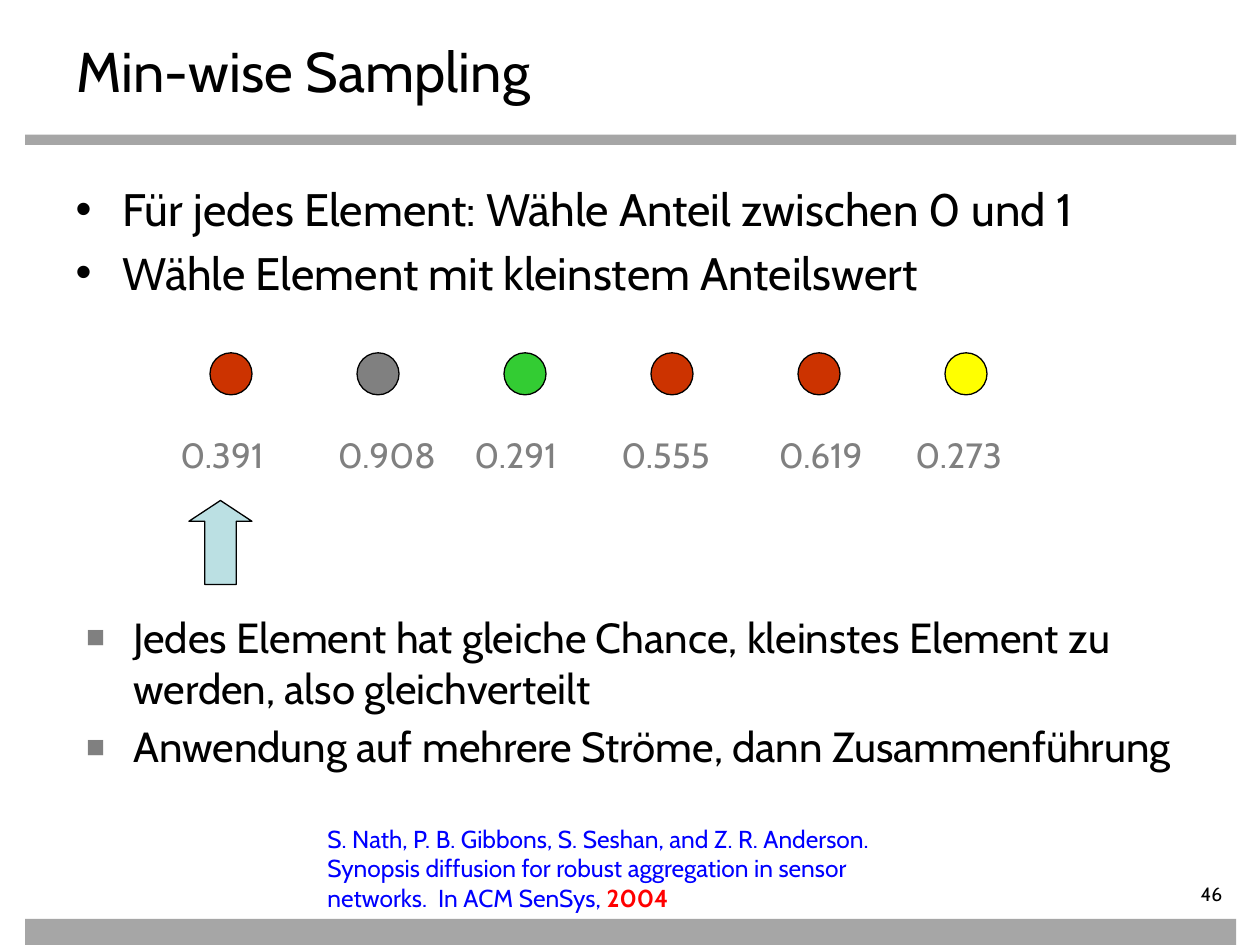
from lxml.etree import SubElement
from pptx import Presentation
from pptx.dml.color import RGBColor
from pptx.enum.shapes import MSO_SHAPE
from pptx.enum.text import MSO_ANCHOR, MSO_AUTO_SIZE, PP_ALIGN
from pptx.oxml.ns import qn
from pptx.util import Pt

FONT = "Cabin"
BLACK = RGBColor(0x00, 0x00, 0x00)
BAR_GRAY = RGBColor(0xA6, 0xA6, 0xA6)
GRAY = RGBColor(0x80, 0x80, 0x80)
RED = RGBColor(0xCC, 0x33, 0x00)
GREEN = RGBColor(0x33, 0xCC, 0x33)
YELLOW = RGBColor(0xFF, 0xFF, 0x00)
PALE_BLUE = RGBColor(0xBB, 0xE0, 0xE3)
CITE_BLUE = RGBColor(0x00, 0x00, 0xFF)
YEAR_RED = RGBColor(0xFF, 0x00, 0x00)

TITLE = "Min-wise Sampling"
STEPS = [
    "Für jedes Element: Wähle Anteil zwischen 0 und 1",
    "Wähle Element mit kleinstem Anteilswert",
]
# colour, value, distance of the label to the left of its circle
SAMPLES = [
    (RED, "0.391", 24),
    (GRAY, "0.908", 18),
    (GREEN, "0.291", 24),
    (RED, "0.555", 24),
    (RED, "0.619", 18),
    (YELLOW, "0.273", 24),
]
CONCLUSIONS = [
    "Jedes Element hat gleiche Chance, kleinstes Element zu werden, also gleichverteilt",
    "Anwendung auf mehrere Ströme, dann Zusammenführung",
]
CITATION = (
    "S. Nath, P. B. Gibbons, S. Seshan, and Z. R. Anderson. Synopsis diffusion "
    "for robust aggregation in sensor networks.  In ACM SenSys, "
)
YEAR = "2004"
PAGE_NUMBER = "46"

BARS = [(14.4, 77, 692, 5.8), (14.4, 525, 692, 15)]
FIRST_CIRCLE, CIRCLE_STEP, CIRCLE_TOP, CIRCLE_SIZE = 120, 84, 201.6, 24
LABEL_TOP, LABEL_WIDTH, LABEL_HEIGHT = 244, 132, 31


def place(shape, left, top, width, height):
    shape.left, shape.top = Pt(left), Pt(top)
    shape.width, shape.height = Pt(width), Pt(height)


def add_span(para, text, size, color, bold=False):
    span = para.add_run()
    span.text = text
    span.font.name = FONT
    span.font.size = Pt(size)
    span.font.bold = bold
    span.font.color.rgb = color


def prepare_frame(box, anchor=MSO_ANCHOR.TOP):
    frame = box.text_frame
    frame.word_wrap = True
    frame.auto_size = MSO_AUTO_SIZE.NONE
    frame.vertical_anchor = anchor
    return frame


def add_text(slide, position, spans, size):
    box = slide.shapes.add_textbox(*map(Pt, position))
    para = prepare_frame(box).paragraphs[0]
    for text, color, bold in spans:
        add_span(para, text, size, color, bold)
    return box


def add_figure(slide, kind, position, fill, outlined=True):
    shape = slide.shapes.add_shape(kind, *map(Pt, position))
    shape.shadow.inherit = False
    shape.fill.solid()
    shape.fill.fore_color.rgb = fill
    if outlined:
        shape.line.color.rgb = BLACK
        shape.line.width = Pt(0.75)
    else:
        shape.line.fill.background()
    return shape


def add_bullet(para, char, color, percent):
    properties = para._p.get_or_add_pPr()
    properties.set("marL", str(Pt(27)))
    properties.set("indent", str(-Pt(27)))
    bullet_color = SubElement(properties, qn("a:buClr"))
    SubElement(bullet_color, qn("a:srgbClr"), val=str(color))
    SubElement(properties, qn("a:buSzPct"), val=str(percent * 1000))
    SubElement(properties, qn("a:buFont"), typeface="Arial")
    SubElement(properties, qn("a:buChar"), char=char)


def fill_list(body, position, items, size, char, color, percent):
    place(body, *position)
    frame = prepare_frame(body)
    for index, item in enumerate(items):
        para = frame.add_paragraph() if index else frame.paragraphs[0]
        add_bullet(para, char, color, percent)
        para.space_before = Pt(0.2 * size if index else 0)
        add_span(para, item, size, BLACK)


def add_samples(slide):
    for index, (color, value, shift) in enumerate(SAMPLES):
        left = FIRST_CIRCLE + index * CIRCLE_STEP
        add_figure(slide, MSO_SHAPE.OVAL,
                   (left, CIRCLE_TOP, CIRCLE_SIZE, CIRCLE_SIZE), color)
        add_text(slide, (left - shift, LABEL_TOP, LABEL_WIDTH, LABEL_HEIGHT),
                 [(value, GRAY, False)], 20)


def main():
    deck = Presentation()
    deck.slide_width, deck.slide_height = Pt(720), Pt(540)
    slide = deck.slides.add_slide(deck.slide_layouts.get_by_name("Two Content"))
    title, steps, conclusions = list(slide.placeholders)

    for bar in BARS:
        add_figure(slide, MSO_SHAPE.RECTANGLE, bar, BAR_GRAY, outlined=False)

    place(title, 36.7, 20.2, 648, 39.6)
    para = prepare_frame(title, MSO_ANCHOR.MIDDLE).paragraphs[0]
    para.alignment = PP_ALIGN.LEFT
    add_span(para, TITLE, 32, BLACK)

    fill_list(steps, (36, 100, 675, 84), STEPS, 26, "•", BLACK, 100)
    add_samples(slide)
    arrow = add_figure(slide, MSO_SHAPE.UP_ARROW, (108, 286, 36, 48), PALE_BLUE)
    arrow.adjustments[0], arrow.adjustments[1] = 0.5, 0.33
    fill_list(conclusions, (42, 346, 648, 113), CONCLUSIONS, 24, "■", GRAY, 75)

    number = add_text(slide, (626.4, 504, 79.2, 15.8),
                      [(PAGE_NUMBER, BLACK, False)], 11)
    frame = number.text_frame
    frame.margin_left = frame.margin_top = frame.margin_bottom = 0
    frame.paragraphs[0].alignment = PP_ALIGN.RIGHT

    add_text(slide, (180, 467.3, 360, 58.3),
             [(CITATION, CITE_BLUE, False), (YEAR, YEAR_RED, True)], 14)
    deck.save("out.pptx")


if __name__ == "__main__":
    main()
